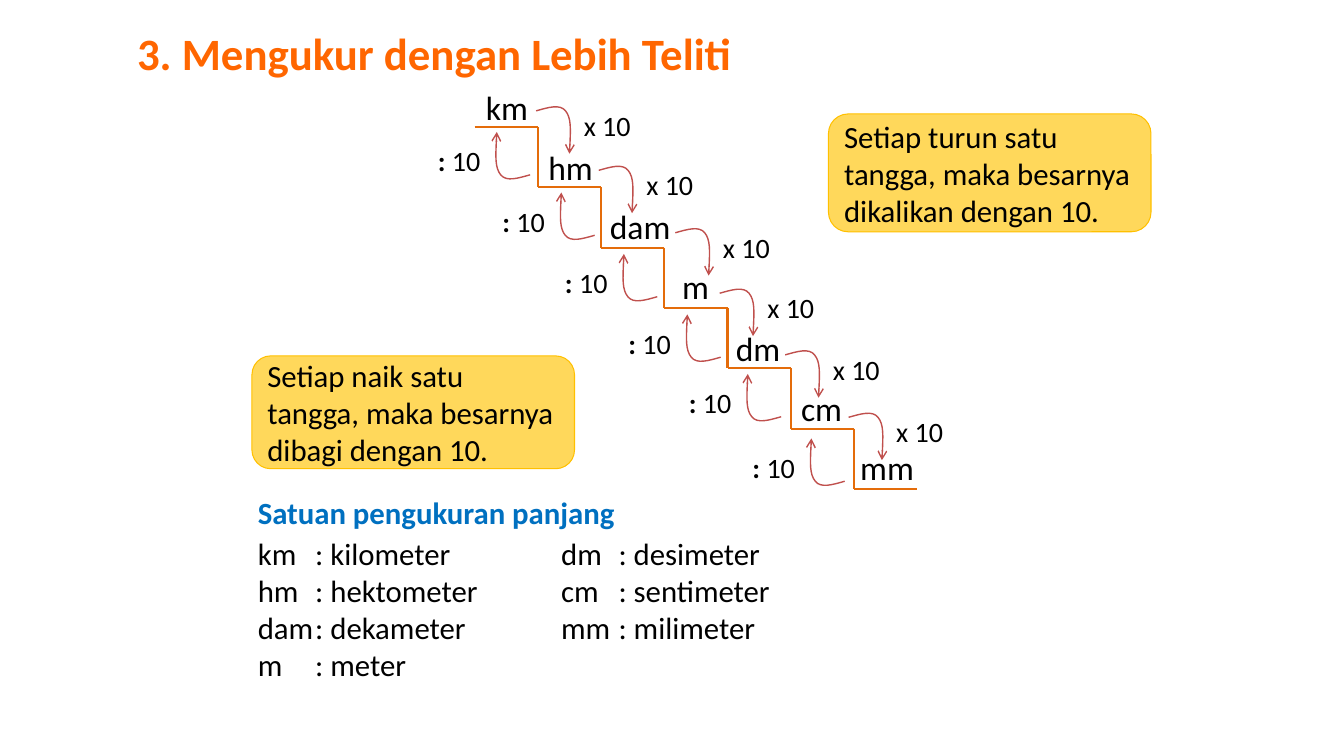
"""Build the slide about the ladder of metric length units."""
from typing import NamedTuple

import lxml.etree
import pptx
import pptx.dml.color
import pptx.enum.shapes
import pptx.enum.text
import pptx.oxml
import pptx.oxml.ns
import pptx.util

Pt = pptx.util.Pt
Color = pptx.dml.color.RGBColor
Align = pptx.enum.text.PP_ALIGN
Anchor = pptx.enum.text.MSO_ANCHOR
Fit = pptx.enum.text.MSO_AUTO_SIZE
qn = pptx.oxml.ns.qn

BLACK = Color(0x00, 0x00, 0x00)
TITLE = Color(0xFF, 0x66, 0x00)
BLUE = Color(0x00, 0x70, 0xC0)
STAIR = Color(0xE4, 0x6C, 0x0A)
RED = Color(0xC0, 0x50, 0x4D)
YELLOW = Color(0xFF, 0xD8, 0x5B)
GOLD = Color(0xFF, 0xC0, 0x00)

LEFT, TOP = 339.1, 90.7
TREAD, RISE = 45.15, 43.1
WIDE, HIGH = 24.5, 33.5
CURVE = [(0, 2.9), (8.6, 0.5), (17, -2.2), (21, 2.9),
         (25.2, 7.9), (24.5, 20.2), (23.8, HIGH)]
TURNED = [(WIDE - x, HIGH - y) for x, y in CURVE]


class Spot(NamedTuple):
    x: float
    y: float


class Unit(NamedTuple):
    name: str
    spot: Spot


class Step(NamedTuple):
    down: Spot
    up: Spot


class Block(NamedTuple):
    lines: list[str]
    spot: Spot
    wide: float
    high: float
    color: Color = BLACK
    bold: bool = False


class Note(NamedTuple):
    text: str
    spot: Spot
    high: float


UNITS = [
    Unit("km", Spot(328.3, 55.4)),
    Unit("hm", Spot(373.7, 97.9)),
    Unit("dam", Spot(423.4, 140.4)),
    Unit("m", Spot(463, 182.9)),
    Unit("dm", Spot(507.6, 227.5)),
    Unit("cm", Spot(553, 270)),
    Unit("mm", Spot(599.8, 312.5)),
]
STEPS = [
    Step(Spot(383, 76.3), Spot(354.2, 94.3)),
    Step(Spot(427.7, 118.8), Spot(400.3, 137.5)),
    Step(Spot(482.4, 163.4), Spot(445, 181.4)),
    Step(Spot(514.1, 206.6), Spot(490.3, 224.6)),
    Step(Spot(560.9, 250.6), Spot(533.5, 267.1)),
    Step(Spot(606.2, 295.2), Spot(578.9, 313.2)),
]
BLOCKS = [
    Block(["km\t: kilometer", "hm\t: hektometer", "dam\t: dekameter", "m\t: meter"],
          Spot(177.1, 378.7), 211.7, 108.7),
    Block(["dm\t: desimeter", "cm\t: sentimeter", "mm\t: milimeter"],
          Spot(393.8, 378.7), 211.7, 74.2),
    Block(["Satuan pengukuran panjang"], Spot(177.1, 349.2), 341.3, 35.3, BLUE, True),
]
NOTES = [
    Note("Setiap turun satu tangga, maka besarnya dikalikan dengan 10.",
         Spot(591.8, 81.4), 84.2),
    Note("Setiap naik satu tangga, maka besarnya dibagi dengan 10.",
         Spot(180, 254.2), 80.6),
]


def style(para, size: float, color: Color = BLACK, bold: bool | None = None) -> None:
    font = para.font
    font.name, font.size, font.bold = "Calibri", Pt(size), bold
    font.color.rgb = color


def add_box(shapes, spot: Spot, wide: float, high: float):
    frame = shapes.add_textbox(Pt(spot.x), Pt(spot.y), Pt(wide), Pt(high)).text_frame
    frame.word_wrap = True
    return frame


def add_label(shapes, parts: list[str], spot: Spot, wide: float, high: float,
              size: float) -> None:
    frame = add_box(shapes, spot, wide, high)
    frame.vertical_anchor = Anchor.MIDDLE
    para = frame.paragraphs[0]
    para.alignment = Align.CENTER
    style(para, size)
    for part in parts:
        run = para.add_run()
        run.text = part
        if part == ":":
            run.font.bold = True


def add_line(shapes, start: Spot, end: Spot) -> None:
    line = shapes.add_connector(pptx.enum.shapes.MSO_CONNECTOR.STRAIGHT,
                                Pt(start.x), Pt(start.y), Pt(end.x), Pt(end.y))
    line.line.color.rgb = STAIR
    line.line.width = Pt(1.5)
    lxml.etree.SubElement(line._element.spPr, qn("a:effectLst"))


def add_stairs(shapes) -> None:
    for i in range(len(UNITS)):
        start = Spot(LEFT + i * TREAD, TOP + i * RISE)
        edge = Spot(start.x + TREAD, start.y)
        add_line(shapes, start, edge)
        if i < len(STEPS):
            add_line(shapes, edge, Spot(edge.x, edge.y + RISE))


def add_arrow(shapes, spot: Spot, curve: list[tuple[float, float]]) -> None:
    pen = shapes.build_freeform(Pt(spot.x), Pt(spot.y))
    pen.add_line_segments([(Pt(spot.x + WIDE), Pt(spot.y + HIGH))], close=False)
    arrow = pen.convert_to_shape()
    trace = next(arrow._element.iter(qn("a:path")))
    for child in list(trace):
        trace.remove(child)
    for tag, points in (("moveTo", curve[:1]), ("cubicBezTo", curve[1:4]),
                        ("cubicBezTo", curve[4:])):
        move = lxml.etree.SubElement(trace, qn(f"a:{tag}"))
        for x, y in points:
            lxml.etree.SubElement(move, qn("a:pt"), x=str(Pt(x)), y=str(Pt(y)))
    arrow.fill.background()
    arrow.shadow.inherit = False
    arrow.line.color.rgb = RED
    arrow.line.width = Pt(1)
    lxml.etree.SubElement(arrow.line._get_or_add_ln(), qn("a:tailEnd"), type="arrow")


def add_block(shapes, block: Block) -> None:
    frame = add_box(shapes, block.spot, block.wide, block.high)
    for i, text in enumerate(block.lines):
        para = frame.add_paragraph() if i else frame.paragraphs[0]
        para.add_run().text = text
        if "\t" in text:
            tabs = lxml.etree.SubElement(para._p.get_or_add_pPr(), qn("a:tabLst"))
            lxml.etree.SubElement(tabs, qn("a:tab"), pos=str(Pt(41)), algn="l")
        style(para, 22, block.color, block.bold)


def add_note(shapes, note: Note) -> None:
    shape = shapes.add_shape(pptx.enum.shapes.MSO_SHAPE.ROUNDED_RECTANGLE,
                             Pt(note.spot.x), Pt(note.spot.y), Pt(230.4), Pt(note.high))
    shape.shadow.inherit = False
    shape.fill.solid()
    shape.fill.fore_color.rgb = YELLOW
    shape.line.color.rgb = GOLD
    shape.line.width = Pt(0.75)
    frame = shape.text_frame
    frame.word_wrap = True
    frame.vertical_anchor = Anchor.MIDDLE
    para = frame.paragraphs[0]
    para.text = note.text
    para.alignment = Align.LEFT
    style(para, 22)


def add_title(title) -> None:
    title.left, title.top, title.width, title.height = Pt(90.7), Pt(15.1), Pt(442.8), Pt(46.1)
    frame = title.text_frame
    frame.text = "3. Mengukur dengan Lebih Teliti"
    frame.word_wrap = False
    frame.auto_size = Fit.SHAPE_TO_FIT_TEXT
    frame.vertical_anchor = Anchor.TOP
    frame.paragraphs[0].alignment = Align.LEFT
    style(frame.paragraphs[0], 32, TITLE, True)


def main() -> None:
    deck = pptx.Presentation()
    deck.slide_width, deck.slide_height = Pt(960), Pt(540)
    shapes = deck.slides.add_slide(deck.slide_layouts[5]).shapes
    add_title(shapes.title)
    add_stairs(shapes)
    for unit in UNITS:
        add_label(shapes, [unit.name], unit.spot, 67.7, 42.5, 24)
    for down, up in STEPS:
        add_arrow(shapes, down, CURVE)
        add_label(shapes, ["x 10"], Spot(down.x + 22.3, down.y - 14), 56.9, 54, 20)
        add_arrow(shapes, up, TURNED)
        add_label(shapes, [":", " 10"], Spot(up.x - 54.7, up.y - 7.4), 56.9, 55.4, 20)
    for block in BLOCKS:
        add_block(shapes, block)
    for note in NOTES:
        add_note(shapes, note)
    deck.save("out.pptx")


if __name__ == "__main__":
    main()
